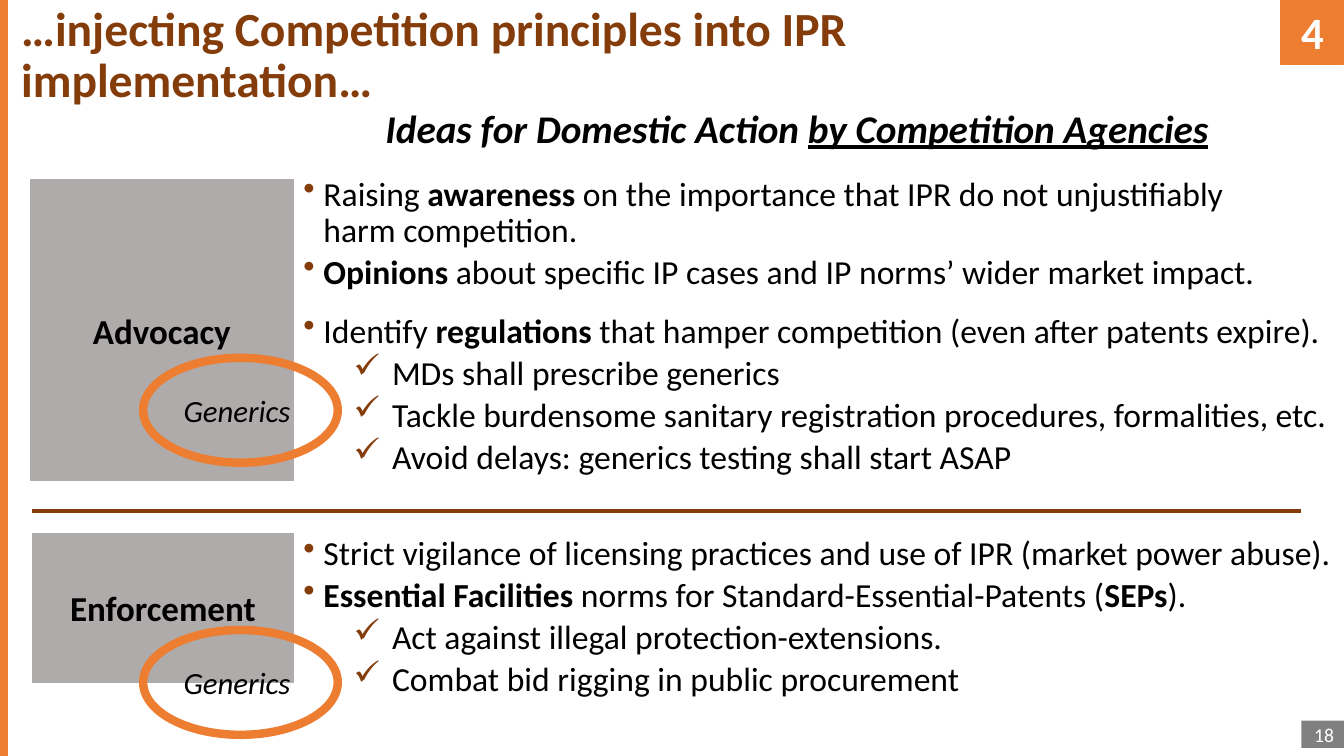
from dataclasses import dataclass

from lxml import etree
from pptx import Presentation
from pptx.dml.color import RGBColor
from pptx.enum.shapes import MSO_CONNECTOR, MSO_SHAPE
from pptx.enum.text import MSO_ANCHOR, MSO_AUTO_SIZE, PP_ALIGN
from pptx.oxml.ns import qn
from pptx.util import Inches, Pt

RECTANGLE, OVAL = MSO_SHAPE.RECTANGLE, MSO_SHAPE.OVAL
STRAIGHT = MSO_CONNECTOR.STRAIGHT
TOP, MIDDLE = MSO_ANCHOR.TOP, MSO_ANCHOR.MIDDLE
LEFT, CENTER, RIGHT = PP_ALIGN.LEFT, PP_ALIGN.CENTER, PP_ALIGN.RIGHT
NO_AUTOFIT = MSO_AUTO_SIZE.NONE

ORANGE = RGBColor(0xED, 0x7D, 0x31)
BROWN = RGBColor(0x84, 0x3C, 0x0B)
SILVER = RGBColor(0xAF, 0xAB, 0xAB)
GRAY = RGBColor(0x80, 0x80, 0x80)
BLACK = RGBColor(0, 0, 0)
WHITE = RGBColor(0xFF, 0xFF, 0xFF)
FONT = "Calibri"
TITLE_ONLY = 5
BULLETS = (("•", 0.2, 0.2), ("✓", 0.88, 0.38))

AWARENESS = [
    (0, "Raising *awareness* on the importance that IPR do not unjustifiably harm competition."),
    (0, "*Opinions* about specific IP cases and IP norms’ wider market impact."),
]
REGULATIONS = [
    (0, "Identify *regulations* that hamper competition (even after patents expire)."),
    (1, "MDs shall prescribe generics"),
    (1, "Tackle burdensome sanitary registration procedures, formalities, etc."),
    (1, "Avoid delays: generics testing shall start ASAP"),
]
VIGILANCE = [
    (0, "Strict vigilance of licensing practices and use of IPR (market power abuse)."),
    (0, "*Essential Facilities *norms for Standard-Essential-Patents (*SEPs*)."),
    (1, "Act against illegal protection-extensions."),
    (1, "Combat bid rigging in public procurement"),
]


@dataclass
class Box:
    left: int
    top: int
    width: int
    height: int

    def area(self, left, top, width, height):
        return Box(
            self.left + int(self.width * left / 100),
            self.top + int(self.height * top / 100),
            int(self.width * width / 100),
            int(self.height * height / 100),
        )

    def bounds(self):
        return self.left, self.top, self.width, self.height


def write_spans(para, text, size, color=BLACK, bold=False, italic=False, emphasis="bold"):
    for index, piece in enumerate(text.split("*")):
        if not piece:
            continue
        span = para.add_run()
        span.text = piece
        span.font.name = FONT
        span.font.size = Pt(size)
        span.font.color.rgb = color
        span.font.italic = italic
        emphasized = index % 2 == 1
        span.font.bold = bold or (emphasized and emphasis == "bold")
        if emphasized and emphasis == "underline":
            span.font.underline = True


def write_text(shape, text, anchor=MIDDLE, align=CENTER, **style):
    frame = shape.text_frame
    frame.word_wrap = True
    frame.auto_size = NO_AUTOFIT
    frame.vertical_anchor = anchor
    para = frame.paragraphs[0]
    para.alignment = align
    write_spans(para, text, **style)
    return para


def add_block(page, kind, box, fill=None, line=None, line_width=1):
    block = page.shapes.add_shape(kind, *box.bounds())
    block.shadow.inherit = False
    if fill is None:
        block.fill.background()
    else:
        block.fill.solid()
        block.fill.fore_color.rgb = fill
    if line is None:
        block.line.fill.background()
    else:
        block.line.color.rgb = line
        block.line.width = Pt(line_width)
    return block


def add_rule(page, box, color, width):
    rule = page.shapes.add_connector(
        STRAIGHT, box.left, box.top, box.left + box.width, box.top + box.height
    )
    rule.line.color.rgb = color
    rule.line.width = Pt(width)
    etree.SubElement(rule._element.spPr, qn("a:effectLst"))


def add_bullet(para, level):
    mark, margin, hanging = BULLETS[level]
    para.level = level
    properties = para._p.get_or_add_pPr()
    properties.set("marL", str(Inches(margin)))
    properties.set("indent", str(-Inches(hanging)))
    color = etree.SubElement(properties, qn("a:buClr"))
    etree.SubElement(color, qn("a:srgbClr"), val=str(BROWN))
    etree.SubElement(properties, qn("a:buChar"), char=mark)


def add_bullet_list(page, box, items):
    frame = page.shapes.add_textbox(*box.bounds()).text_frame
    frame.word_wrap = True
    for index, (level, text) in enumerate(items):
        para = frame.add_paragraph() if index else frame.paragraphs[0]
        add_bullet(para, level)
        para.line_spacing = Pt(26)
        para.space_before = Pt(2 if index else 0)
        para.space_after = Pt(2)
        write_spans(para, text, size=24)


def add_frame(page, box):
    add_rule(page, box.area(0.3, 0, 0, 100), ORANGE, 6)
    number = add_block(page, RECTANGLE, box.area(96.83, 95.33, 3.17, 3.6), GRAY)
    write_text(number, "18", align=RIGHT, size=14, color=WHITE)
    badge = add_block(page, RECTANGLE, box.area(95.3, 0, 4.7, 8.53), ORANGE, ORANGE, 0.75)
    write_text(badge, "4", anchor=TOP, size=32, color=WHITE, bold=True)


def add_heading(page, box):
    title = page.shapes.title
    title.left, title.top, title.width, title.height = box.area(0.83, 0, 83.18, 13.33).bounds()
    para = write_text(
        title, "…injecting Competition principles into IPR implementation…",
        anchor=TOP, align=LEFT, size=34, color=BROWN, bold=True,
    )
    para.line_spacing = 0.9
    subtitle = page.shapes.add_textbox(*box.area(26.63, 12.27, 65.33, 9.2).bounds())
    write_text(
        subtitle, "Ideas for Domestic Action *by Competition Agencies*",
        size=28, bold=True, italic=True, emphasis="underline",
    )


def add_section(page, box, name, label_area, ring_area, lists):
    label = add_block(page, RECTANGLE, box.area(*label_area), SILVER, SILVER)
    write_text(label, name, size=25, bold=True)
    for list_area, items in lists:
        add_bullet_list(page, box.area(*list_area), items)
    ring = add_block(page, OVAL, box.area(*ring_area), line=ORANGE, line_width=6)
    write_text(ring, "Generics ", size=22, italic=True)


def main():
    deck = Presentation()
    deck.slide_width, deck.slide_height = Inches(13.33), Inches(7.5)
    page = deck.slides.add_slide(deck.slide_layouts[TITLE_ONLY])
    whole = Box(0, 0, deck.slide_width, deck.slide_height)
    add_frame(page, whole)
    add_heading(page, whole)
    add_section(
        page, whole.area(0, 22.67, 100, 41.33), "Advocacy",
        (2.25, 2.58, 19.58, 96.45), (10.65, 59.68, 14.48, 33.55),
        [((21.83, 0, 74.93, 40.32), AWARENESS), ((21.83, 43.87, 78.17, 55.81), REGULATIONS)],
    )
    add_rule(page, whole.area(2.4, 67.6, 94.43, 0), BROWN, 2.25)
    add_section(
        page, whole.area(0, 70.27, 100, 26.93), "Enforcement",
        (2.4, 0.99, 19.43, 73.27), (10.65, 48.51, 14.48, 51.49),
        [((21.83, 0, 78.17, 85.64), VIGILANCE)],
    )
    deck.save("out.pptx")


if __name__ == "__main__":
    main()
